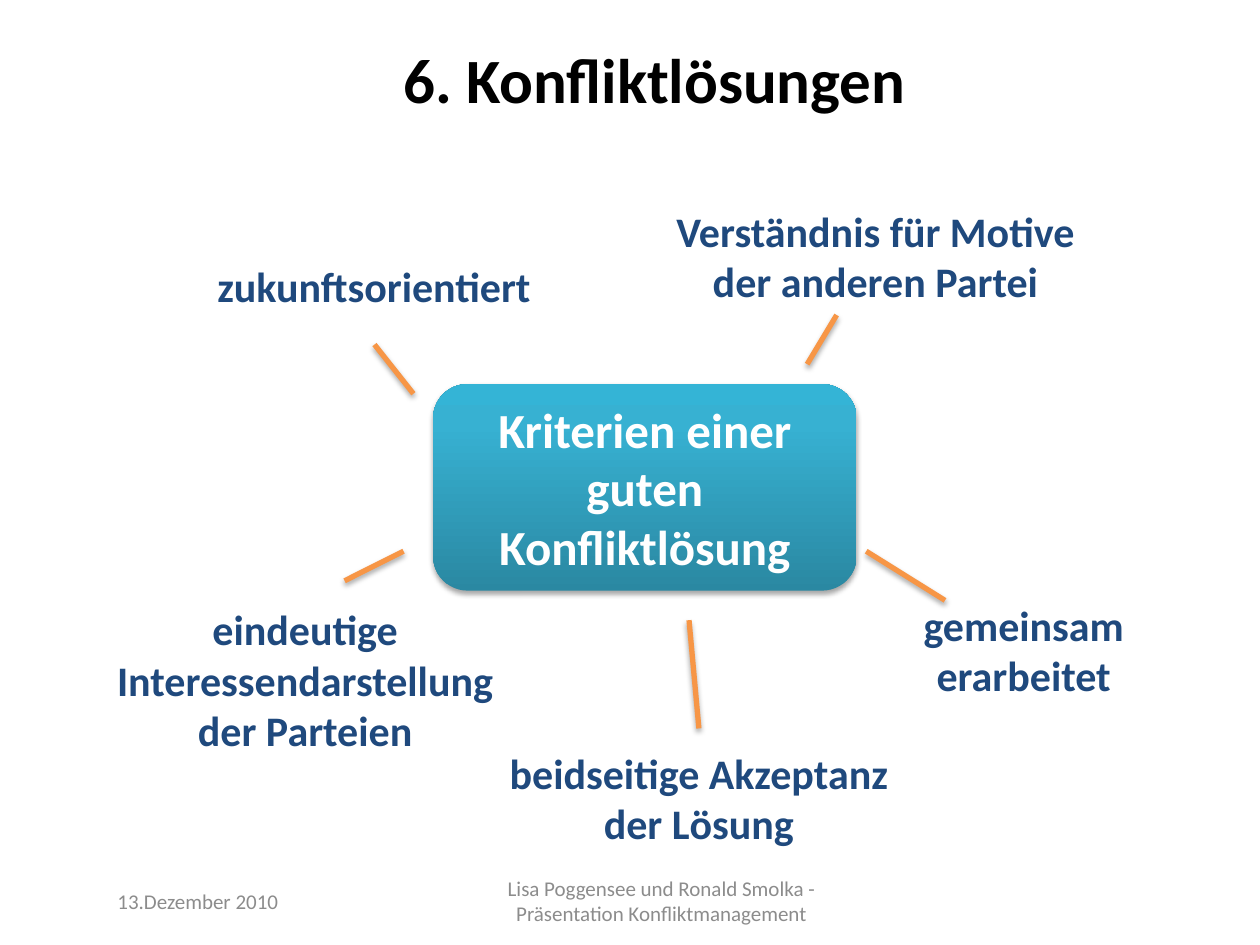
from copy import deepcopy

from lxml import etree
from pptx import Presentation, util as u
from pptx.dml.color import RGBColor
from pptx.enum import shapes, text
from pptx.oxml import ns

# Content: text, box (left, top, width, height) in points
TITLE = ("6. Konfliktlösungen", (56, 0, 636, 90))
CENTER = ("Kriterien einer guten Konfliktlösung", (247.5, 219.5, 242, 118))
DATE = ("13.Dezember 2010", (60, 500.5, 168, 28.75))
FOOTER = ("Lisa Poggensee und Ronald Smolka - Präsentation Konfliktmanagement",
          (264, 500.5, 228, 28.75))

# Criteria: text, label left, top and width, line start, line end
CRITERIA = [
    ("zukunftsorientiert", (112.5, 129.5, 202.5), (214, 196.9), (236.25, 225)),
    ("Verständnis für Motive der anderen Partei", (376.5, 112.5, 247.5), (478.1, 180), (461.25, 208.1)),
    ("gemeinsam erarbeitet", (483.75, 337.5, 202.5), (540, 343.1), (495, 315)),
    ("beidseitige Akzeptanz der Lösung", (270, 422, 258.75), (393.75, 354.4), (399.4, 416.25)),
    ("eindeutige Interessendarstellung der Parteien", (50.6, 354.4, 247.5), (196.9, 331.9), (230.6, 315)),
]
LABEL_HEIGHT = 67.5

THEME = {
    "font": "Calibri",
    "title": (36, "000000", True),
    "center": (28, "FFFFFF", True),
    "label": (24, "1F497D", True),
    "footer": (12, "8C8C8C", False),
    "line": ("F79646", 3),
    "gradient": [(0, "2A88A2"), (0.8, "37B1D2"), (1, "34B4D6")],
    "shadow": {"blur": 3.1, "distance": 1.8, "angle": 90, "color": "000000", "opacity": 35},
}


def points(values):
    return [u.Pt(value) for value in values]


def write(shape, wording, style, align=text.PP_ALIGN.CENTER):
    size, color, bold = THEME[style]
    frame = shape.text_frame
    frame.word_wrap = True
    frame.vertical_anchor = text.MSO_ANCHOR.MIDDLE
    paragraph = frame.paragraphs[0]
    paragraph.text = wording
    paragraph.alignment = align
    font = paragraph.font
    font.name, font.size, font.bold = THEME["font"], u.Pt(size), bold
    font.color.rgb = RGBColor.from_string(color)


def add_text(parent, wording, box, style, align=text.PP_ALIGN.CENTER):
    write(parent.add_textbox(*points(box)), wording, style, align)


def add_shadow(properties):
    """Put a soft outer shadow on a shape or line."""
    look = THEME["shadow"]
    effects = properties.find(ns.qn("a:effectLst"))
    if effects is None:
        effects = etree.SubElement(properties, ns.qn("a:effectLst"))
    shadow = etree.SubElement(
        effects, ns.qn("a:outerShdw"), blurRad=str(u.Pt(look["blur"])),
        dist=str(u.Pt(look["distance"])), dir=str(look["angle"] * 60000), rotWithShape="0")
    color = etree.SubElement(shadow, ns.qn("a:srgbClr"), val=look["color"])
    etree.SubElement(color, ns.qn("a:alpha"), val=str(look["opacity"] * 1000))


def add_center(parent, wording, box):
    shape = parent.add_shape(shapes.MSO_SHAPE.ROUNDED_RECTANGLE, *points(box))
    shape.line.fill.background()
    shape.fill.gradient()
    shape.fill.gradient_angle = 90
    stop_list = shape._element.spPr.find(".//" + ns.qn("a:gsLst"))
    stop_list.append(deepcopy(stop_list[-1]))
    for stop, (position, color) in zip(shape.fill.gradient_stops, THEME["gradient"]):
        stop.position = position
        stop.color.rgb = RGBColor.from_string(color)
    shape.shadow.inherit = False
    add_shadow(shape._element.spPr)
    write(shape, wording, "center")


def add_criterion(parent, wording, place, start, end):
    group = parent.add_group_shape().shapes
    add_text(group, wording, (*place, LABEL_HEIGHT), "label")
    line = group.add_connector(shapes.MSO_CONNECTOR.STRAIGHT, *points((*start, *end)))
    color, width = THEME["line"]
    line.line.color.rgb = RGBColor.from_string(color)
    line.line.width = u.Pt(width)
    add_shadow(line._element.spPr)


def main():
    presentation = Presentation()
    presentation.slide_width, presentation.slide_height = u.Pt(720), u.Pt(540)
    slide = presentation.slides.add_slide(presentation.slide_layouts[6])

    # Title, central box and footer
    add_text(slide.shapes, *TITLE, "title")
    add_center(slide.shapes, *CENTER)
    add_text(slide.shapes, *DATE, "footer", text.PP_ALIGN.LEFT)
    add_text(slide.shapes, *FOOTER, "footer")

    # Criteria around the box
    for criterion in CRITERIA:
        add_criterion(slide.shapes, *criterion)

    presentation.save("out.pptx")


if __name__ == "__main__":
    main()
